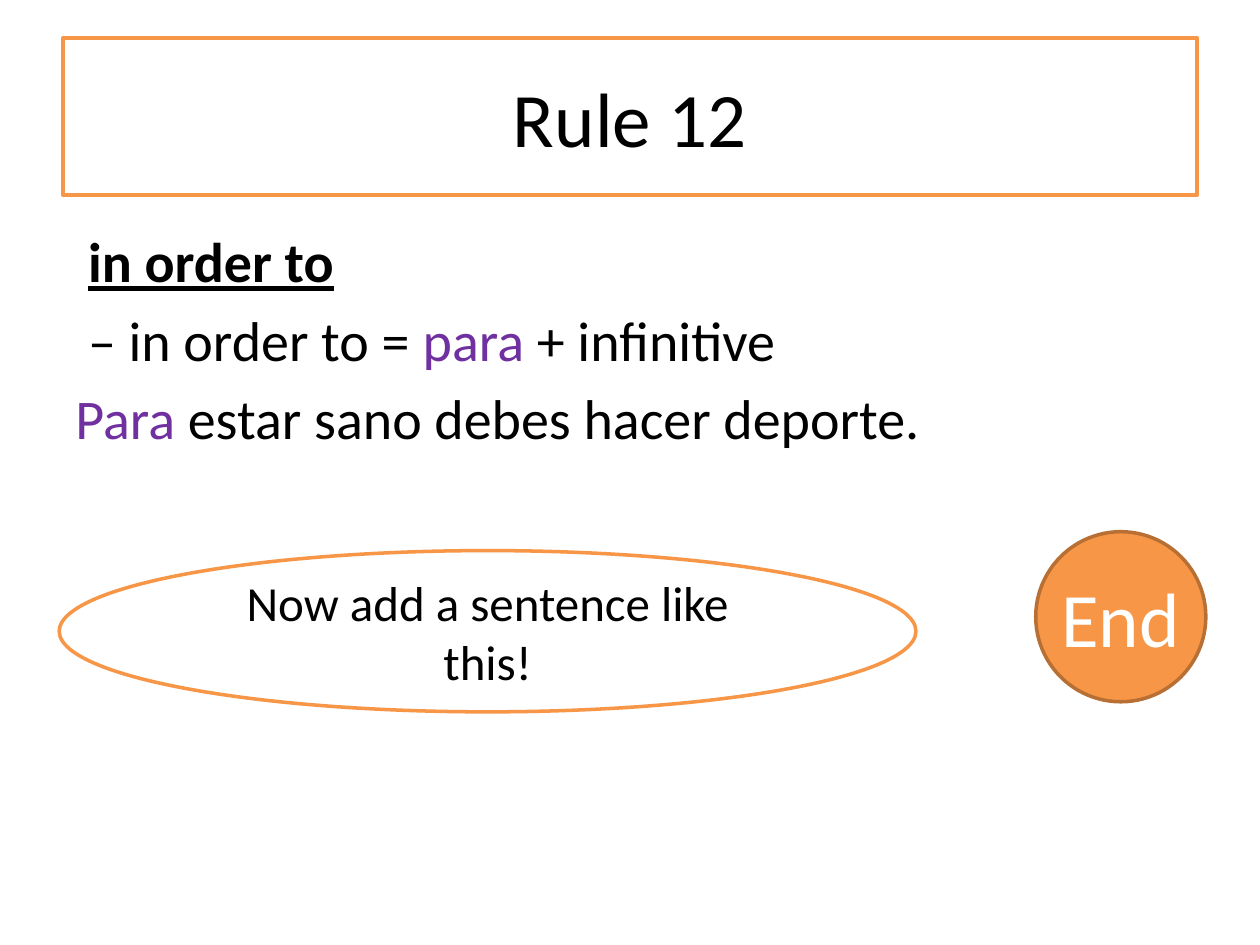
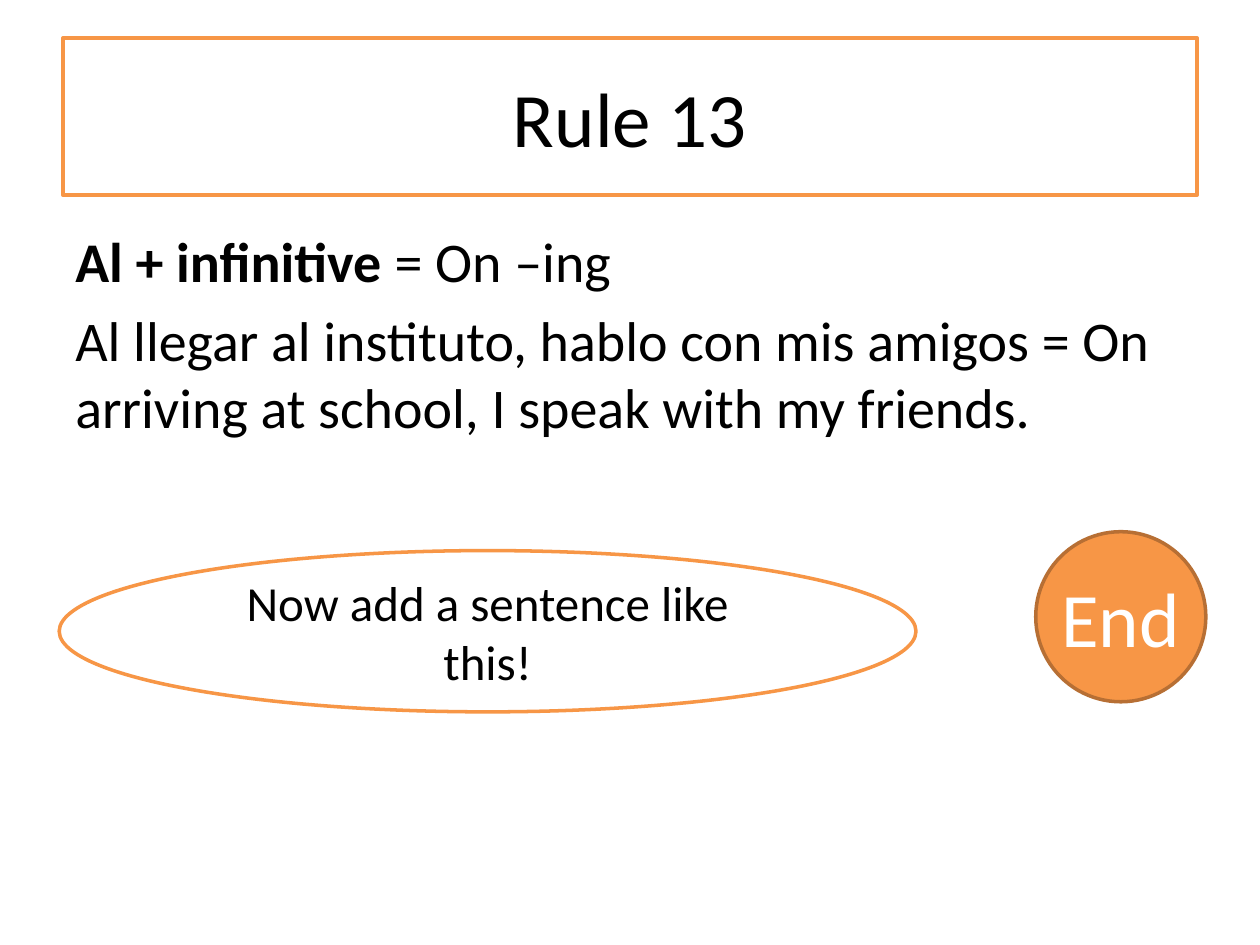
from pptx import Presentation
from pptx.dml.color import RGBColor
from pptx.enum import shapes, text
from pptx.util import Inches, Pt

COLORS = {
    "black": "000000",
    "white": "FFFFFF",
    "orange": "F79646",
    "brown": "B76F34",
    "purple": "7030A0",
}
FONT = "Calibri"

# Each rule: title and paragraphs; each paragraph is a list of (text, style) runs.
RULES = [
    ("Rule 12", [
        [(" ", "bold"), ("in order to", "heading")],
        [(" – in order to = ", "plain"), ("para ", "spanish"), ("+ infinitive", "plain")],
        [("Para ", "spanish"), ("estar sano debes hacer deporte.", "plain")],
    ]),
    ("Rule 13", [
        [("Al + infinitive ", "bold"), ("= On –ing", "plain")],
        [("Al llegar al instituto, hablo con mis amigos = "
          "On arriving at school, I speak with my friends.", "plain")],
    ]),
]
PROMPT = "Now add a sentence like this!"
BUTTON = "End"

TITLE_BOX = (0.5, 0.3, 9, 1.25)
BODY_BOX = (0.5, 1.75, 9, 4.95)
PROMPT_BOX = (0.47, 4.37, 6.8, 1.28)
BUTTON_BOX = (8.22, 4.22, 1.35, 1.35)


def color(name):
    return RGBColor.from_string(COLORS[name])


def set_font(font, size, color_name):
    font.name = FONT
    font.size = Pt(size)
    font.color.rgb = color(color_name)


def add_label(slide, kind, box, label, size, fill="white", line="orange",
              font_color="black", wrap=True):
    """Add an outlined shape with one centred line of text."""
    shape = slide.shapes.add_shape(kind, *map(Inches, box))
    shape.shadow.inherit = False
    shape.fill.solid()
    shape.fill.fore_color.rgb = color(fill)
    shape.line.color.rgb = color(line)
    shape.line.width = Pt(2)
    frame = shape.text_frame
    frame.word_wrap = wrap
    frame.vertical_anchor = text.MSO_ANCHOR.MIDDLE
    paragraph = frame.paragraphs[0]
    paragraph.text = label
    paragraph.alignment = text.PP_ALIGN.CENTER
    set_font(paragraph.font, size, font_color)


def add_body(slide, paragraphs):
    frame = slide.shapes.add_textbox(*map(Inches, BODY_BOX)).text_frame
    frame.word_wrap = True
    for index, runs in enumerate(paragraphs):
        paragraph = frame.add_paragraph() if index else frame.paragraphs[0]
        paragraph.space_before = Pt(6.4)
        set_font(paragraph.font, 32, "black")
        for words, style in runs:
            run = paragraph.add_run()
            run.text = words
            set_font(run.font, 32, "purple" if style == "spanish" else "black")
            run.font.bold = style in ("bold", "heading")
            run.font.underline = style == "heading"


def add_rule_slide(presentation, title, paragraphs):
    slide = presentation.slides.add_slide(presentation.slide_layouts[6])
    add_label(slide, shapes.MSO_SHAPE.RECTANGLE, TITLE_BOX, title, 44)
    add_body(slide, paragraphs)
    add_label(slide, shapes.MSO_SHAPE.OVAL, PROMPT_BOX, PROMPT, 28)
    add_label(slide, shapes.MSO_SHAPE.OVAL, BUTTON_BOX, BUTTON, 44, fill="orange",
              line="brown", font_color="white", wrap=False)


def main():
    presentation = Presentation()
    presentation.slide_width = Inches(10)
    presentation.slide_height = Inches(7.5)
    for title, paragraphs in RULES:
        add_rule_slide(presentation, title, paragraphs)
    presentation.save("out.pptx")


if __name__ == "__main__":
    main()
